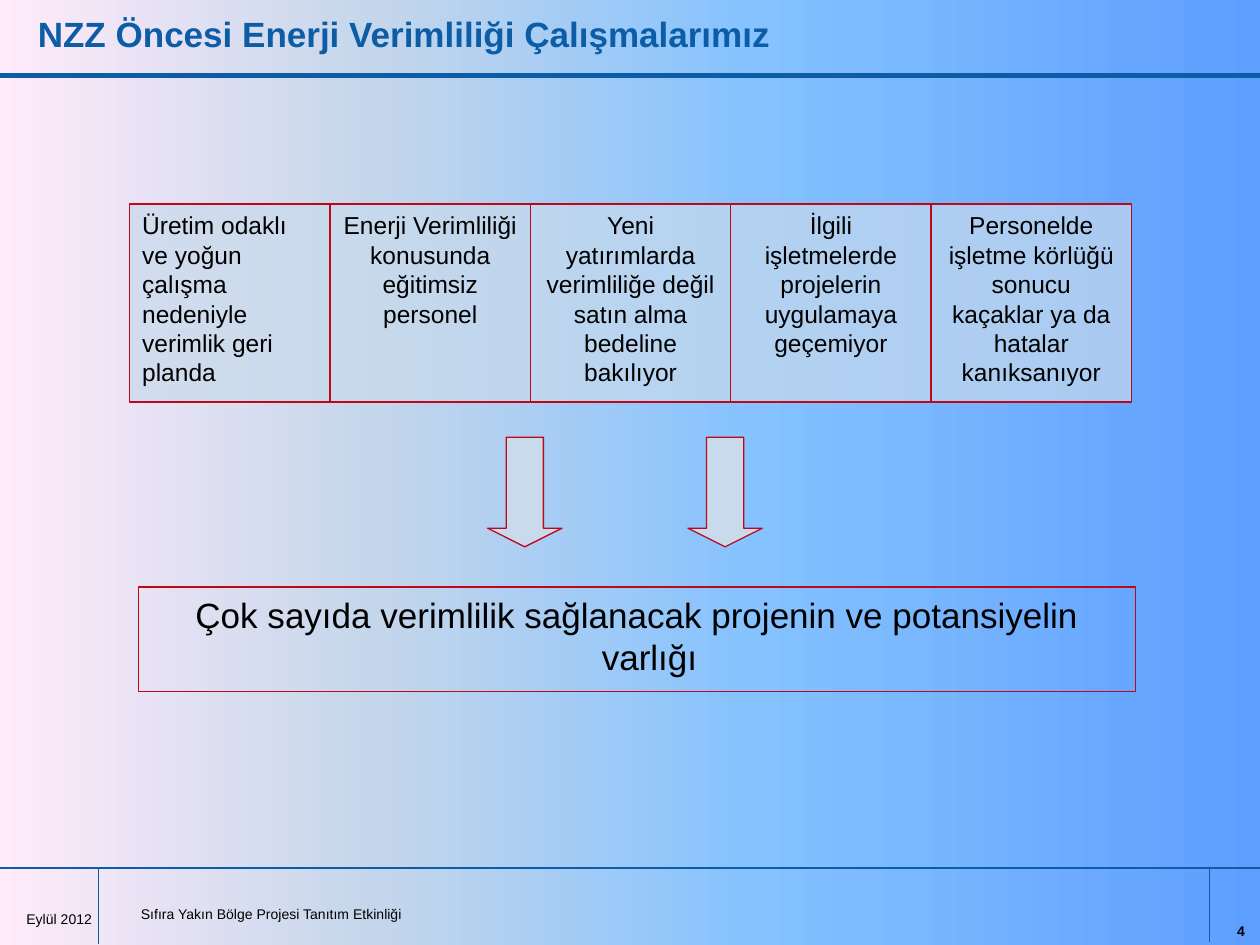
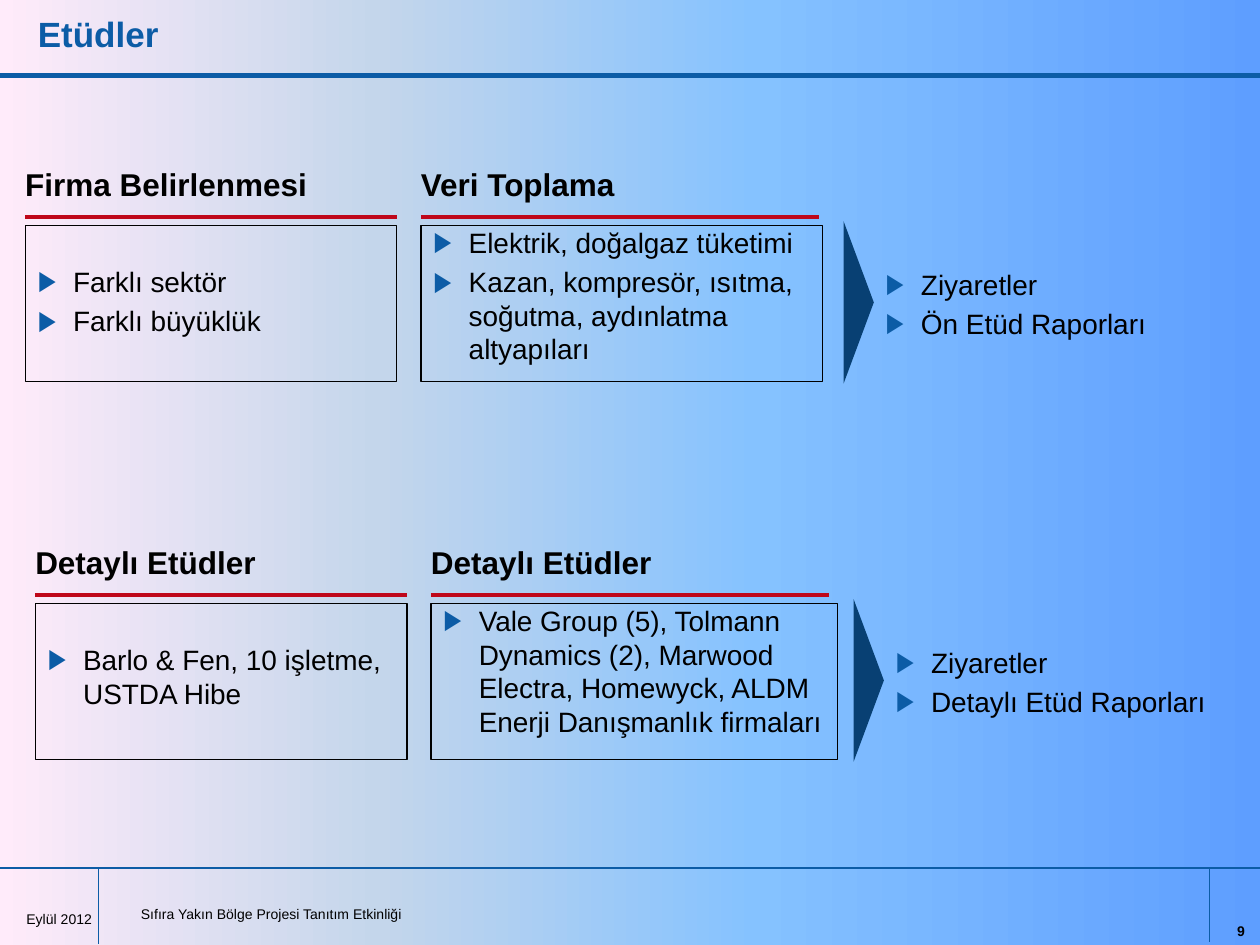
from dataclasses import dataclass

from lxml import etree
from pptx import Presentation
from pptx.dml.color import RGBColor
from pptx.enum.shapes import MSO_CONNECTOR, MSO_SHAPE
from pptx.enum.text import MSO_ANCHOR, MSO_AUTO_SIZE, PP_ALIGN
from pptx.oxml.ns import qn
from pptx.util import Inches, Pt

LEFT, CENTER, RIGHT = PP_ALIGN.LEFT, PP_ALIGN.CENTER, PP_ALIGN.RIGHT
TOP, MIDDLE, BOTTOM = MSO_ANCHOR.TOP, MSO_ANCHOR.MIDDLE, MSO_ANCHOR.BOTTOM
RECT, DOWN_ARROW, TRIANGLE = MSO_SHAPE.RECTANGLE, MSO_SHAPE.DOWN_ARROW, MSO_SHAPE.ISOSCELES_TRIANGLE
STRAIGHT = MSO_CONNECTOR.STRAIGHT
NO_AUTOFIT = MSO_AUTO_SIZE.NONE


@dataclass(frozen=True)
class Theme:
    font: str = "Arial"
    blue: str = "0C5CA6"
    navy: str = "084073"
    red: str = "BF071A"
    pale: str = "C8DAEC"
    black: str = "000000"
    background: tuple = ((0, "5E9EFF"), (40, "85C2FF"), (70, "C4D6EB"), (100, "FFEBFA"))
    title: int = 20
    heading: int = 18
    body: int = 16
    cause: int = 14
    footer: int = 8
    thin: float = 0.75
    rule: float = 2.25
    band: float = 3


T = Theme()

DATE = "Eylül 2012"
EVENT = "Sıfıra Yakın Bölge Projesi Tanıtım Etkinliği"
FRAME_LINES = [
    (0, 6.89, 10, 6.89, T.thin),
    (0.78, 6.9, 0.78, 7.49, T.thin),
    (9.6, 6.89, 9.6, 7.48, T.thin),
    (0, 0.6, 10, 0.6, T.band),
]

CAUSES_TITLE = "NZZ Öncesi Enerji Verimliliği Çalışmalarımız"
CAUSES = [
    ("Üretim odaklı ve yoğun çalışma nedeniyle verimlik geri planda", LEFT),
    ("Enerji Verimliliği konusunda eğitimsiz personel", CENTER),
    ("Yeni yatırımlarda verimliliğe değil satın alma bedeline bakılıyor", CENTER),
    ("İlgili işletmelerde projelerin uygulamaya geçemiyor", CENTER),
    ("Personelde işletme körlüğü sonucu kaçaklar ya da hatalar kanıksanıyor", CENTER),
]
CAUSE_WIDTH = 1.59
RESULT = "Çok sayıda verimlilik sağlanacak projenin ve potansiyelin varlığı"

STUDIES_TITLE = "Etüdler"
STUDIES = [
    {
        "origin": (0.2, 1.31),
        "steps": [
            ("Firma Belirlenmesi", ["Farklı sektör", "Farklı büyüklük"], 2.95, 0.31),
            ("Veri Toplama", ["Elektrik, doğalgaz tüketimi",
                              "Kazan, kompresör, ısıtma, soğutma, aydınlatma altyapıları"], 3.19, 0),
        ],
        "outputs": ["Ziyaretler", "Ön Etüd Raporları"],
    },
    {
        "origin": (0.28, 4.31),
        "steps": [
            ("Detaylı Etüdler", ["Barlo & Fen, 10 işletme, USTDA Hibe"], 2.95, 0.31),
            ("Detaylı Etüdler", ["Vale Group (5), Tolmann Dynamics (2), Marwood Electra, "
                                 "Homewyck, ALDM Enerji Danışmanlık firmaları"], 3.23, 0),
        ],
        "outputs": ["Ziyaretler", "Detaylı Etüd Raporları"],
    },
]
STEP_PITCH = 3.14
RULE_WIDTHS = (2.95, 3.16)


def rgb(value):
    return RGBColor.from_string(value)


def box(x, y, w, h):
    return Inches(x), Inches(y), Inches(w), Inches(h)


def add_bullet(pPr):
    color = etree.SubElement(pPr, qn("a:buClr"))
    etree.SubElement(color, qn("a:srgbClr"), val=T.blue)
    etree.SubElement(pPr, qn("a:buFont"), typeface=T.font)
    etree.SubElement(pPr, qn("a:buChar"), char="▶")


def write(shape, text, size=T.body, color=T.black, bold=False, align=LEFT, anchor=TOP,
          insets=(0.1, 0.05, 0.1, 0.05), indent=None, bullet=False):
    tf = shape.text_frame
    tf.word_wrap = True
    tf.auto_size = NO_AUTOFIT
    tf.vertical_anchor = anchor
    tf.margin_left, tf.margin_top, tf.margin_right, tf.margin_bottom = map(Inches, insets)
    for i, line in enumerate([text] if isinstance(text, str) else text):
        p = tf.add_paragraph() if i else tf.paragraphs[0]
        p.alignment = align
        p.space_before = Pt(size * 0.2 if i else 0)
        pPr = p._p.get_or_add_pPr()
        if indent:
            pPr.set("marL", str(Inches(indent[0])))
            pPr.set("indent", str(Inches(indent[1])))
        if bullet:
            add_bullet(pPr)
        r = p.add_run()
        r.text = line
        r.font.name, r.font.size, r.font.bold = T.font, Pt(size), bold
        r.font.color.rgb = rgb(color)


def add_text(s, text, at, **fmt):
    write(s.shapes.add_textbox(*box(*at)), text, **fmt)


def add_shape(s, kind, at, fill=None, line=None, alpha=None):
    sp = s.shapes.add_shape(kind, *box(*at))
    sp.shadow.inherit = False
    if fill:
        sp.fill.solid()
        sp.fill.fore_color.rgb = rgb(fill)
        if alpha:
            color = next(sp._element.spPr.iter(qn("a:srgbClr")))
            etree.SubElement(color, qn("a:alpha"), val=str(alpha * 1000))
    else:
        sp.fill.background()
    if line:
        sp.line.color.rgb = rgb(line)
        sp.line.width = Pt(T.thin)
    else:
        sp.line.fill.background()
    return sp


def add_line(s, x1, y1, x2, y2, width, color):
    line = s.shapes.add_connector(STRAIGHT, Inches(x1), Inches(y1), Inches(x2), Inches(y2))
    line.line.color.rgb = rgb(color)
    line.line.width = Pt(width)
    etree.SubElement(line._element.spPr, qn("a:effectLst"))


def set_background(master):
    fill = master.background.fill
    fill.gradient()
    fill.gradient_angle = 180
    stops = next(master.element.iter(qn("a:gsLst")))
    for stop in list(stops):
        stops.remove(stop)
    for position, color in T.background:
        stop = etree.SubElement(stops, qn("a:gs"), pos=str(position * 1000))
        etree.SubElement(stop, qn("a:srgbClr"), val=color)


def add_slide(prs, title, number):
    s = prs.slides.add_slide(prs.slide_layouts[5])
    for *ends, width in FRAME_LINES:
        add_line(s, *ends, width, T.blue)
    ph = s.shapes.title
    ph.left, ph.top, ph.width, ph.height = box(0.2, 0.05, 9.53, 0.54)
    write(ph, title, size=T.title, color=T.blue, bold=True)
    add_text(s, DATE, (0, 7.06, 0.83, 0.35), size=T.footer, align=RIGHT, anchor=BOTTOM)
    add_text(s, EVENT, (1.02, 7.01, 7.76, 0.37), size=T.footer, insets=(0.1, 0.18, 0.1, 0.05))
    add_text(s, str(number), (9.63, 6.98, 0.35, 0.52), size=T.footer, bold=True,
             align=RIGHT, anchor=BOTTOM)
    return s


def build_causes(prs):
    s = add_slide(prs, CAUSES_TITLE, 4)
    for i, (cause, align) in enumerate(CAUSES):
        sp = add_shape(s, RECT, (1.03 + i * CAUSE_WIDTH, 1.62, CAUSE_WIDTH, 1.57),
                       fill=T.pale, line=T.red, alpha=69)
        write(sp, cause, size=T.cause, align=align)
    for i in range(2):
        arrow = add_shape(s, DOWN_ARROW, (3.87 + i * CAUSE_WIDTH, 3.47, 0.59, 0.87),
                          fill=T.pale, line=T.red)
        arrow.adjustments[0], arrow.adjustments[1] = 0.5, 0.25
    result = add_shape(s, RECT, (1.1, 4.66, 7.91, 0.83), line=T.red)
    write(result, RESULT, size=T.title, align=CENTER, indent=(0.2, -0.2))


def build_studies(prs):
    s = add_slide(prs, STUDIES_TITLE, 9)
    listing = {"indent": (0.38, -0.28), "bullet": True}
    flush = (0, 0, 0, 0)
    for study in STUDIES:
        left, top = study["origin"]
        for i, (heading, items, width, gap) in enumerate(study["steps"]):
            x = left + i * STEP_PITCH
            add_text(s, heading, (x, top, 2.95, 0.3), size=T.heading, bold=True,
                     anchor=BOTTOM, insets=flush)
            add_line(s, x, top + 0.41, x + RULE_WIDTHS[i], top + 0.41, T.rule, T.red)
            sp = add_shape(s, RECT, (x, top + 0.48, width, 1.24), line=T.black)
            write(sp, items, insets=(0, gap, 0, 0), **listing)
        pointer = add_shape(s, TRIANGLE, (left + 5.97, top + 0.97, 1.29, 0.24), fill=T.navy)
        pointer.rotation = 90
        add_text(s, study["outputs"], (left + 6.73, top + 0.48, 2.6, 1.24),
                 anchor=MIDDLE, insets=flush, **listing)


def main():
    prs = Presentation()
    prs.slide_width, prs.slide_height = Inches(10), Inches(7.5)
    set_background(prs.slide_master)
    build_causes(prs)
    build_studies(prs)
    prs.save("out.pptx")


if __name__ == "__main__":
    main()
